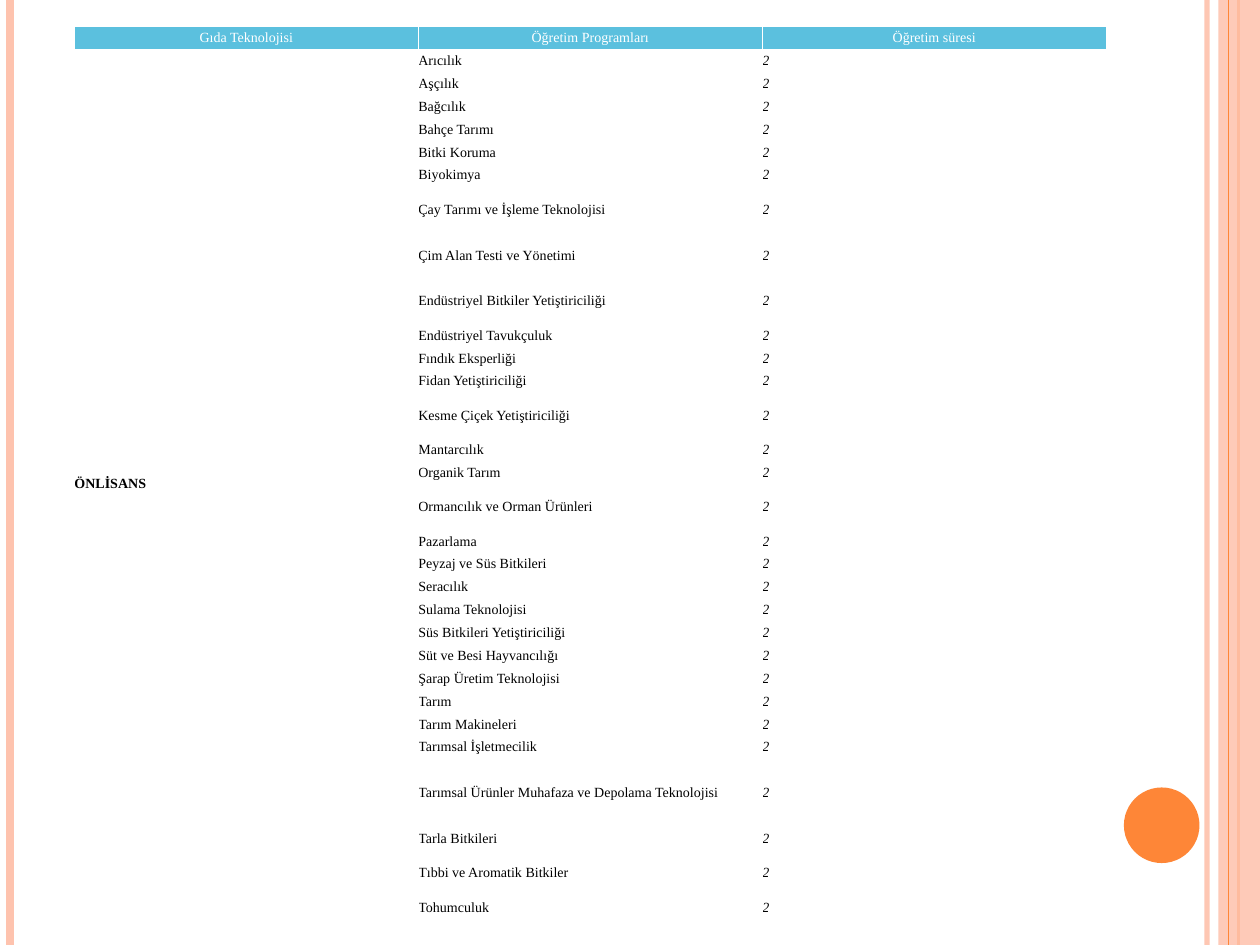
from pptx import Presentation
from pptx.dml.color import RGBColor
from pptx.enum.shapes import MSO_CONNECTOR as Link, MSO_SHAPE as Kind
from pptx.enum.text import MSO_ANCHOR as Anchor, PP_ALIGN as Align
from pptx.oxml.ns import qn
from pptx.util import Inches, Pt
from lxml.etree import SubElement

HEAD = ("Gıda Teknolojisi", "Öğretim Programları", "Öğretim süresi")
LEVEL = "ÖNLİSANS"
YEARS = "2"
# Programme name and its height in row units
PROGS = [
    ("Arıcılık", 1), ("Aşçılık", 1), ("Bağcılık", 1),
    ("Bahçe Tarımı", 1), ("Bitki Koruma", 1), ("Biyokimya", 1),
    ("Çay Tarımı ve İşleme Teknolojisi", 2),
    ("Çim Alan Testi ve Yönetimi", 2),
    ("Endüstriyel Bitkiler Yetiştiriciliği", 2),
    ("Endüstriyel Tavukçuluk", 1), ("Fındık Eksperliği", 1),
    ("Fidan Yetiştiriciliği", 1), ("Kesme Çiçek Yetiştiriciliği", 2),
    ("Mantarcılık", 1), ("Organik Tarım", 1),
    ("Ormancılık ve Orman Ürünleri", 2), ("Pazarlama", 1),
    ("Peyzaj ve Süs Bitkileri", 1), ("Seracılık", 1),
    ("Sulama Teknolojisi", 1), ("Süs Bitkileri Yetiştiriciliği", 1),
    ("Süt ve Besi Hayvancılığı", 1), ("Şarap Üretim Teknolojisi", 1),
    ("Tarım", 1), ("Tarım Makineleri", 1), ("Tarımsal İşletmecilik", 1),
    ("Tarımsal Ürünler Muhafaza ve Depolama Teknolojisi", 3),
    ("Tarla Bitkileri", 1), ("Tıbbi ve Aromatik Bitkiler", 2),
    ("Tohumculuk", 1),
]
WIDE, HIGH = 10, 7.5
LEFT, TOP, SPAN, TALL = 0.59, 0.21, 8.19, 7.09
PINK, ORANGE, BLUE, WHITE, BLACK = "FEC3AE", "FE8637", "5BC0DE", "FFFFFF", "000000"
# x, colour, width in points, opacity in percent
BACK = [(9.58, PINK, 3, 93), (0.08, PINK, 4.5, 100), (9.83, ORANGE, 1.5, 100)]
FRONT = [(9.75, ORANGE, 0.75, 100)]
CELL = dict(margin_left=0, margin_right=0, margin_top=0, margin_bottom=0,
            vertical_anchor=Anchor.MIDDLE)
FONT = dict(name="Times New Roman", size=Pt(8), bold=False, italic=False)


def paint(fill, hue, opaque=100):
    fill.solid()
    fill.fore_color.rgb = RGBColor.from_string(hue)
    if opaque < 100:
        tint = fill._xPr.find(qn("a:solidFill"))[0]
        SubElement(tint, qn("a:alpha")).set("val", str(opaque * 1000))


def assign(item, values):
    for key, value in values.items():
        setattr(item, key, value)


def stripe(shapes, x, hue, width, opaque):
    line = shapes.add_connector(Link.STRAIGHT, Inches(x), 0, Inches(x), Inches(HIGH))
    line.line.width = Pt(width)
    paint(line.line.fill, hue, opaque)
    SubElement(line._element.spPr, qn("a:effectLst"))


def block(shapes, kind, box, hue, opaque=100):
    shape = shapes.add_shape(kind, *map(Inches, box))
    shape.shadow.inherit = False
    shape.line.fill.background()
    paint(shape.fill, hue, opaque)


def write(cell, text, hue=BLACK, align=Align.LEFT, **style):
    para = cell.text_frame.paragraphs[0]
    para.alignment = align
    run = para.add_run()
    run.text = text
    assign(run.font, {**FONT, **style})
    run.font.color.rgb = RGBColor.from_string(hue)


def grid(shapes):
    units = [1] + [size for _, size in PROGS]
    frame = shapes.add_table(len(units), len(HEAD),
                             *map(Inches, (LEFT, TOP, SPAN, TALL)))
    table = frame.table
    table.horz_banding = False
    for col in table.columns:
        col.width = Inches(SPAN / len(HEAD))
    for row, size in zip(table.rows, units):
        row.height = Inches(TALL * size / sum(units))
    for r in range(len(units)):
        for c in range(len(HEAD)):
            cell = table.cell(r, c)
            assign(cell, CELL)
            paint(cell.fill, WHITE if r else BLUE)
    for c, text in enumerate(HEAD):
        write(table.cell(0, c), text, WHITE, Align.CENTER)
    table.cell(1, 0).merge(table.cell(len(PROGS), 0))
    write(table.cell(1, 0), LEVEL, bold=True)
    for r, (name, _) in enumerate(PROGS, 1):
        write(table.cell(r, 1), name)
        write(table.cell(r, 2), YEARS, italic=True)


def main():
    deck = Presentation()
    deck.slide_width, deck.slide_height = Inches(WIDE), Inches(HIGH)
    slide = deck.slides.add_slide(deck.slide_layouts[6])
    paint(slide.background.fill, WHITE)
    shapes = slide.shapes
    for mark in BACK:
        stripe(shapes, *mark)
    block(shapes, Kind.RECTANGLE, (9.67, 0, 0.33, HIGH), PINK, 87)
    for mark in FRONT:
        stripe(shapes, *mark)
    block(shapes, Kind.OVAL, (8.92, 6.25, 0.6, 0.6), ORANGE)
    grid(shapes)
    deck.save("out.pptx")


if __name__ == "__main__":
    main()
